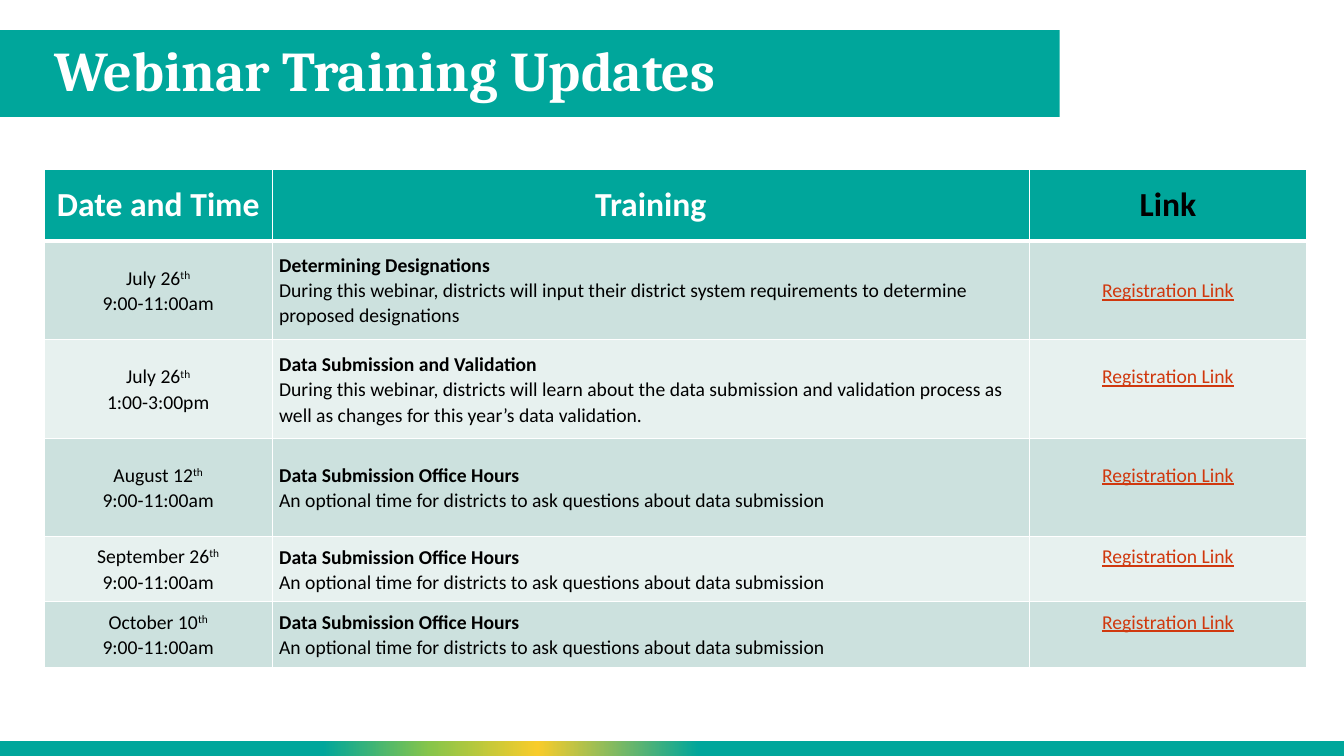
"""Build the webinar training updates slide."""
from dataclasses import dataclass

from lxml import etree
from pptx import Presentation, util as u
from pptx.dml.color import RGBColor
from pptx.enum import shapes, text
from pptx.oxml import ns


@dataclass(frozen=True)
class Theme:
    teal: str = "00A69B"
    green: str = "87C54A"
    yellow: str = "F8CC2B"
    white: str = "FFFFFF"
    black: str = "000000"
    link: str = "D0380E"
    bands: tuple[str, str] = ("CCE1DE", "E7F1EF")
    title_font: str = "Cambria"
    body_font: str = "Calibri"
    title_size: int = 40
    head_size: int = 24
    body_size: int = 14
    thin: int = 1
    thick: int = 3


@dataclass(frozen=True)
class Box:
    """Hold a position and size in percent of the slide."""
    left: float
    top: float
    width: float
    height: float


@dataclass(frozen=True)
class Session:
    day: str
    hours: str
    name: str
    about: str
    spacing: float = 1.05
    link_lift: float = 3.4


@dataclass(frozen=True)
class Heading:
    label: str
    color: str
    width: float


T = Theme()
BAR = Box(0, 4, 78.85, 11.47)
TITLE = Box(3.3, 4, 75.47, 11.47)
FOOTER = Box(0, 98, 100, 2)
FOOTER_STOPS = [(0, T.teal), (24, T.teal), (32, T.green),
                (40, T.yellow), (52, T.teal), (100, T.teal)]
TABLE_LEFT, TABLE_TOP = 3.3, 22.4
ROW_HEIGHTS = [9.47, 13.07, 13.07, 12.93, 8.67, 8.67]
HEADINGS = [Heading("Date and Time", T.white, 16.95),
            Heading("Training", T.white, 56.34),
            Heading("Link", T.black, 20.63)]
MORNING = "9:00-11:00am"
OFFICE = ("Data Submission Office Hours",
          "An optional time for districts to ask questions about data submission")
SESSIONS = [
    Session("July 26", MORNING, "Determining Designations",
            "During this webinar, districts will input their district system "
            "requirements to determine proposed designations", link_lift=0),
    Session("July 26", "1:00-3:00pm", "Data Submission and Validation",
            "During this webinar, districts will learn about the data submission and "
            "validation process as well as changes for this year’s data validation.", 1.07),
    *(Session(day, MORNING, *OFFICE)
      for day in ("August 12", "September 26", "October 10")),
]

prs = Presentation()
prs.slide_width, prs.slide_height = u.Inches(13.33), u.Inches(7.5)


def across(percent: float) -> int:
    """Return a share of the slide width."""
    return round(prs.slide_width * percent / 100)


def down(percent: float) -> int:
    """Return a share of the slide height."""
    return round(prs.slide_height * percent / 100)


def place(box: Box) -> tuple[int, int, int, int]:
    """Return a box in slide units."""
    return across(box.left), down(box.top), across(box.width), down(box.height)


def add_band(s, box: Box):
    """Draw a plain teal band."""
    sp = s.shapes.add_shape(shapes.MSO_SHAPE.RECTANGLE, *place(box))
    sp.shadow.inherit = False
    sp.fill.solid()
    sp.fill.fore_color.rgb = RGBColor.from_string(T.teal)
    sp.line.fill.background()
    return sp


def add_color(parent, color: str) -> None:
    """Append a colour element."""
    etree.SubElement(parent, ns.qn("a:srgbClr"), val=color)


def set_gradient(sp, stops: list[tuple[int, str]]) -> None:
    """Fill a shape with a gradient from left to right."""
    sp.fill.gradient()
    sp.fill.gradient_angle = 0
    stop_list = sp._element.spPr.find(ns.qn("a:gradFill")).find(ns.qn("a:gsLst"))
    for old in list(stop_list):
        stop_list.remove(old)
    for share, color in stops:
        add_color(etree.SubElement(stop_list, ns.qn("a:gs"), pos=str(share * 1000)), color)


def set_font(font, size: int, color: str, name: str = T.body_font,
             bold: bool = False, underline: bool = False) -> None:
    """Set the look of a font."""
    font.name, font.size, font.bold, font.underline = name, u.Pt(size), bold, underline
    font.color.rgb = RGBColor.from_string(color)


def set_borders(cell, top: int, bottom: int) -> None:
    """Give a cell white borders."""
    props = cell._tc.get_or_add_tcPr()
    widths = {"L": T.thin, "R": T.thin, "T": top, "B": bottom}
    for i, (side, width) in enumerate(widths.items()):
        line = etree.Element(ns.qn(f"a:ln{side}"), w=str(u.Pt(width)))
        add_color(etree.SubElement(line, ns.qn("a:solidFill")), T.white)
        props.insert(i, line)


def style_cell(cell, fill: str, top: int = T.thin, bottom: int = T.thin) -> None:
    """Set the fill, anchor and borders of a cell."""
    cell.fill.solid()
    cell.fill.fore_color.rgb = RGBColor.from_string(fill)
    cell.vertical_anchor = text.MSO_ANCHOR.MIDDLE
    set_borders(cell, top, bottom)


def write(p, words: str, centred: bool = True, spacing: float = 1.07,
          color: str = T.black, bold: bool = False, underline: bool = False,
          size: int = T.body_size) -> None:
    """Write one table paragraph."""
    p.text = words
    p.alignment = text.PP_ALIGN.CENTER if centred else text.PP_ALIGN.LEFT
    p.line_spacing = spacing
    set_font(p.font, size, color, bold=bold, underline=underline)


def fill_session(cells, session: Session, fill: str, top: int) -> None:
    """Fill one table row with a session."""
    for cell in cells:
        style_cell(cell, fill, top)
        cell.margin_left = cell.margin_right = u.Inches(0.07)
        cell.margin_top = cell.margin_bottom = 0
    date, training, link = cells
    p = date.text_frame.paragraphs[0]
    write(p, session.day)
    r = p.add_run()
    r.text = "th"
    r._r.get_or_add_rPr().set("baseline", "30000")
    write(date.text_frame.add_paragraph(), session.hours)
    write(training.text_frame.paragraphs[0], session.name, centred=False, bold=True)
    write(training.text_frame.add_paragraph(), session.about,
          centred=False, spacing=session.spacing)
    write(link.text_frame.paragraphs[0], "Registration Link", color=T.link, underline=True)
    link.margin_bottom = down(session.link_lift)


def add_schedule(s) -> None:
    """Draw the training table."""
    box = Box(TABLE_LEFT, TABLE_TOP, sum(h.width for h in HEADINGS), sum(ROW_HEIGHTS))
    table = s.shapes.add_table(len(ROW_HEIGHTS), len(HEADINGS), *place(box)).table
    table.horz_banding = False
    for row, height in zip(table.rows, ROW_HEIGHTS):
        row.height = down(height)
    for i, heading in enumerate(HEADINGS):
        table.columns[i].width = across(heading.width)
        cell = table.cell(0, i)
        style_cell(cell, T.teal, bottom=T.thick)
        write(cell.text_frame.paragraphs[0], heading.label, spacing=1.0,
              color=heading.color, bold=True, size=T.head_size)
    for i, session in enumerate(SESSIONS):
        cells = [table.cell(i + 1, c) for c in range(len(HEADINGS))]
        fill_session(cells, session, T.bands[i % 2], T.thin if i else T.thick)


def add_title(s, words: str) -> None:
    """Write the slide title."""
    tf = s.shapes.add_textbox(*place(TITLE)).text_frame
    tf.word_wrap = True
    tf.vertical_anchor = text.MSO_ANCHOR.MIDDLE
    p = tf.paragraphs[0]
    p.text = words
    p.line_spacing = 0.9
    set_font(p.font, T.title_size, T.white, T.title_font, bold=True)


def main() -> None:
    """Draw and save the slide."""
    s = prs.slides.add_slide(prs.slide_layouts[6])
    add_band(s, BAR)
    set_gradient(add_band(s, FOOTER), FOOTER_STOPS)
    add_title(s, "Webinar Training Updates")
    add_schedule(s)
    prs.save("out.pptx")


if __name__ == "__main__":
    main()
